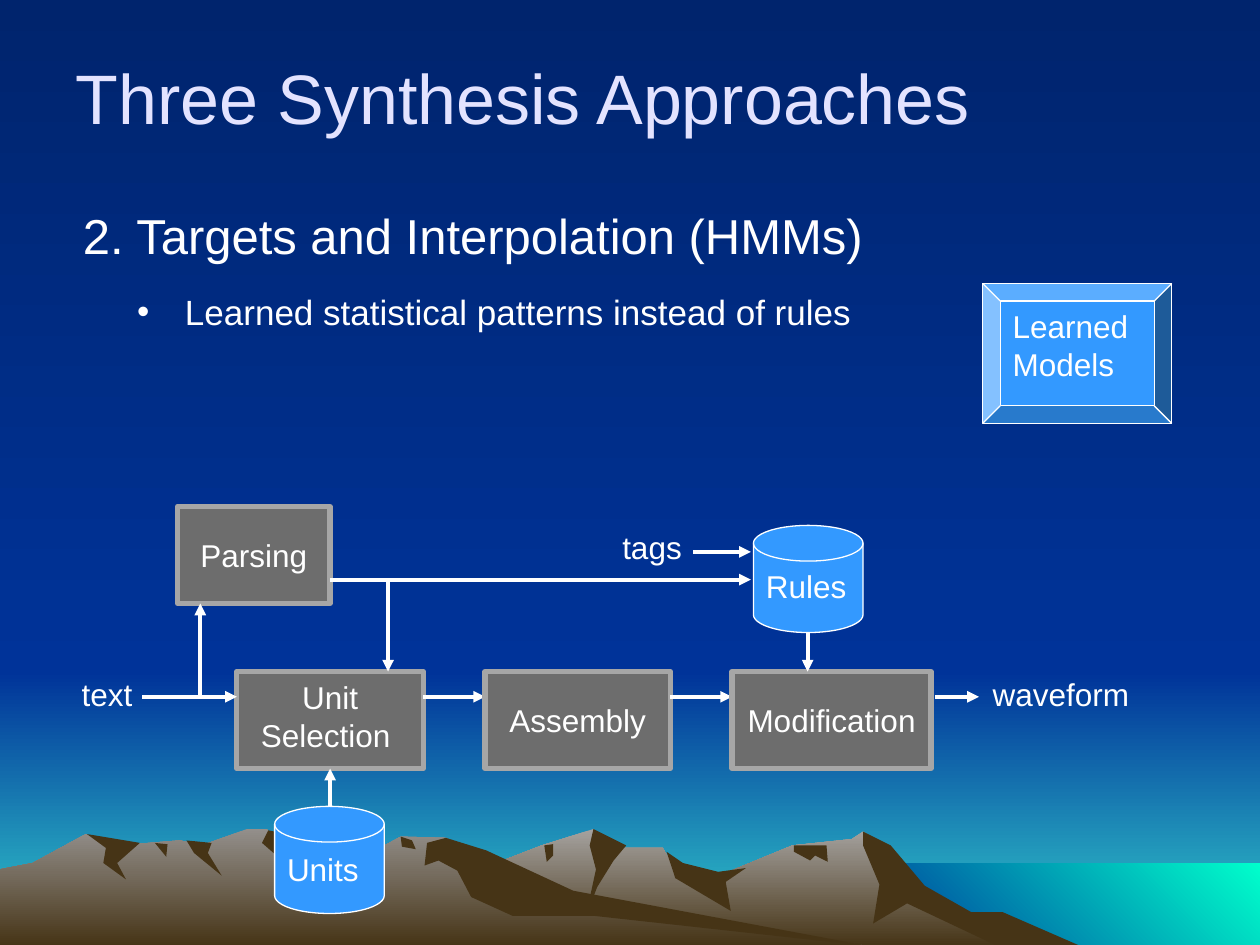
"""Build a slide on target-and-interpolation speech synthesis."""
from lxml import etree
from pptx import Presentation
from pptx.dml.color import RGBColor
from pptx.enum.shapes import MSO_CONNECTOR, MSO_SHAPE
from pptx.enum.text import MSO_ANCHOR, MSO_AUTO_SIZE, PP_ALIGN
from pptx.oxml.ns import qn
from pptx.util import Pt

PX = 9144
WIDTH, HEIGHT = 1000, 750
HORIZON, SEA_LEFT, SEA_TOP = 533, 683, 685
FOOT = 751
FONT = "Arial"
LEFT, CENTER = PP_ALIGN.LEFT, PP_ALIGN.CENTER
TOP, MIDDLE = MSO_ANCHOR.TOP, MSO_ANCHOR.MIDDLE
RECTANGLE, BEVEL = MSO_SHAPE.RECTANGLE, MSO_SHAPE.BEVEL
DISK = MSO_SHAPE.FLOWCHART_MAGNETIC_DISK
STRAIGHT = MSO_CONNECTOR.STRAIGHT
FIT_SHAPE = MSO_AUTO_SIZE.SHAPE_TO_FIT_TEXT
BOTTOM_SIDE = 2
DOWNWARD, UP_RIGHT = 270, 45

WHITE = RGBColor(0xFF, 0xFF, 0xFF)
LAVENDER = RGBColor(0xE3, 0xE3, 0xFF)
NAVY = RGBColor(0x00, 0x24, 0x6D)
ROYAL = RGBColor(0x00, 0x33, 0x99)
TEAL = RGBColor(0x33, 0xCC, 0xCC)
AQUA = RGBColor(0x00, 0xFF, 0xCC)
STONE = RGBColor(0xA5, 0xA2, 0x9F)
DARK_STONE = RGBColor(0x93, 0x8F, 0x8B)
EARTH = RGBColor(0x46, 0x34, 0x16)
GRAY = RGBColor(0x6D, 0x6D, 0x6D)
SILVER = RGBColor(0xA6, 0xA6, 0xA6)
BLUE = RGBColor(0x33, 0x99, 0xFF)

EAST_RIDGE = [(258, FOOT), (327, 709), (394, 685), (430, 671), (471, 658), (486, 673), (526, 673),
              (536, 690), (566, 697), (629, 671), (676, 666), (685, 660), (702, 671), (723, 698),
              (764, 723), (821, FOOT)]
EAST_SHADOWS = {
    "long slope": [(685, 660), (707, 671), (734, 703), (771, 724), (796, 724), (858, FOOT),
                   (792, FOOT), (720, 717), (693, 733), (698, 702), (685, 671)],
    "main peak": [(471, 658), (497, 671), (487, 683), (474, 704), (465, 727), (473, 690), (468, 671)],
    "saddle": [(529, 676), (542, 685), (570, 692), (592, 689), (576, 700), (580, 723), (536, 697)],
    "shoulder": [(630, 671), (656, 671), (657, 684), (647, 679), (643, 683), (630, 676)],
    "notch": [(432, 671), (439, 670), (439, 679), (434, 684)]}
WEST_RIDGE = [(0, FOOT), (0, 690), (26, 685), (68, 662), (94, 671), (143, 667), (160, 671),
              (196, 658), (212, 658), (236, 681), (260, 676), (271, 682), (296, 676), (318, 664),
              (354, 665), (432, 712), (690, FOOT)]
WEST_SHADOWS = {
    "main peak": [(213, 659), (232, 663), (271, 682), (261, 689), (267, 709), (241, 688), (232, 690),
                  (208, 669)],
    "long slope": [(339, 669), (354, 665), (386, 675), (455, 707), (690, FOOT), (472, 727),
                   (407, 727), (374, 712), (363, 691), (348, 683), (337, 687)],
    "saddle": [(318, 664), (327, 667), (330, 674), (319, 672)],
    "shoulder": [(148, 667), (168, 669), (165, 677), (176, 695), (154, 677)],
    "notch": [(123, 669), (133, 670), (132, 680)],
    "first peak": [(69, 662), (111, 669), (93, 685), (100, 698), (82, 685), (84, 673)]}

STEPS_TOP, STEP_HEIGHT, STEP_GAP = 533, 77, 49
FLOW_Y, PARSED_Y, TAGS_Y = 553, 460, 438
STORE_WIDTH, STORE_HEIGHT = 87, 85


def rectangle_points(left, top, right, bottom):
    """Return the corners of a rectangle."""
    return [(left, top), (right, top), (right, bottom), (left, bottom)]


def fill_solid(fill, color):
    """Fill with one colour."""
    fill.solid()
    fill.fore_color.rgb = color


def fill_gradient(fill, start, end, angle=DOWNWARD):
    """Fill with two colours along a counter-clockwise angle."""
    fill.gradient()
    fill.gradient_angle = angle
    for stop, color in zip(fill.gradient_stops, (start, end)):
        stop.color.rgb = color


def write_text(para, text, size=18, color=WHITE, align=LEFT):
    """Write one formatted span into a paragraph."""
    para.alignment = align
    span = para.add_run()
    span.text = text
    span.font.size, span.font.name = Pt(size), FONT
    span.font.color.rgb = color


def add_terrain(page, points):
    """Draw a borderless outline and return its fill."""
    builder = page.shapes.build_freeform(*points[0], scale=PX)
    builder.add_line_segments(points[1:], close=True)
    shape = builder.convert_to_shape()
    shape.shadow.inherit = False
    shape.line.fill.background()
    return shape.fill


def add_range(page, ridge, crest, shadows):
    """Draw a mountain range with its shadows."""
    fill_gradient(add_terrain(page, ridge), crest, EARTH)
    for points in shadows.values():
        fill_solid(add_terrain(page, points), EARTH)


def add_block(page, kind, bounds, lines, fill=BLUE, border=WHITE, weight=0.75, align=LEFT, anchor=TOP):
    """Add a labelled preset shape."""
    box = page.shapes.add_shape(kind, *(value * PX for value in bounds))
    box.shadow.inherit = False
    fill_solid(box.fill, fill)
    box.line.color.rgb = border
    box.line.width = Pt(weight)
    frame = box.text_frame
    frame.word_wrap = True
    frame.vertical_anchor = anchor
    for index, line in enumerate(lines):
        para = frame.add_paragraph() if index else frame.paragraphs[0]
        write_text(para, line, align=align)
    return box


def add_step(page, left, top, width, text, anchor=MIDDLE):
    """Add a gray processing step."""
    return add_block(page, RECTANGLE, (left, top, width, STEP_HEIGHT), [text], fill=GRAY,
                     border=SILVER, weight=3, align=CENTER, anchor=anchor)


def add_store(page, left, top, text, anchor=TOP):
    """Add a blue data store."""
    add_block(page, DISK, (left, top, STORE_WIDTH, STORE_HEIGHT), [text], anchor=anchor)


def add_label(page, left, top, width, text):
    """Add a one-line label."""
    box = page.shapes.add_textbox(left * PX, top * PX, width * PX, 40 * PX)
    box.text_frame.word_wrap = False
    box.text_frame.auto_size = FIT_SHAPE
    write_text(box.text_frame.paragraphs[0], text)


def add_arrow(page, start, end):
    """Add a white arrow between two points."""
    arrow = page.shapes.add_connector(STRAIGHT, *(value * PX for value in start + end))
    arrow.line.color.rgb = WHITE
    arrow.line.width = Pt(2.25)
    properties = arrow.element.spPr
    etree.SubElement(properties.find(qn("a:ln")), qn("a:tailEnd"), type="triangle")
    etree.SubElement(properties, qn("a:effectLst"))
    return arrow


def add_bullet(para, margin, indent):
    """Give a paragraph a hanging round bullet."""
    properties = para._p.get_or_add_pPr()
    properties.set("marL", str(margin * PX))
    properties.set("indent", str(indent * PX))
    etree.SubElement(properties, qn("a:buFont"), typeface=FONT)
    etree.SubElement(properties, qn("a:buChar"), char="•")


def add_scenery(page):
    """Draw the sky, the sea and the mountains."""
    fill_gradient(page.background.fill, NAVY, ROYAL)
    low_sky = rectangle_points(0, HORIZON, WIDTH, HEIGHT)
    high_sky = rectangle_points(0, 0, WIDTH, HORIZON)
    sea = rectangle_points(SEA_LEFT, SEA_TOP, WIDTH, HEIGHT)
    fill_gradient(add_terrain(page, low_sky), ROYAL, TEAL)
    fill_gradient(add_terrain(page, high_sky), NAVY, ROYAL)
    fill_gradient(add_terrain(page, sea), ROYAL, AQUA, angle=UP_RIGHT)
    add_range(page, EAST_RIDGE, STONE, EAST_SHADOWS)
    add_range(page, WEST_RIDGE, DARK_STONE, WEST_SHADOWS)


def add_heading(page):
    """Format the title and raise it above the scenery."""
    title = page.shapes.title
    title.element.getparent().append(title.element)
    title.left, title.top, title.width, title.height = 50 * PX, 14 * PX, 800 * PX, 125 * PX
    title.text_frame.vertical_anchor = MIDDLE
    write_text(title.text_frame.paragraphs[0], "Three Synthesis Approaches", size=40, color=LAVENDER)


def add_body(page):
    """Add the approach and its bullet."""
    frame = page.shapes.add_textbox(56 * PX, 149 * PX, 900 * PX, 237 * PX).text_frame
    frame.word_wrap = True
    approach, detail = frame.paragraphs[0], frame.add_paragraph()
    write_text(approach, "2. Targets and Interpolation (HMMs)", size=28)
    write_text(detail, "Learned statistical patterns instead of rules", size=20)
    approach.line_spacing = detail.line_spacing = 1.2
    approach.space_before, approach.space_after = Pt(5.6), Pt(6)
    detail.space_before, detail.level = Pt(4), 1
    add_bullet(detail, margin=81, indent=-38)


def add_pipeline(page):
    """Draw the steps from text to waveform, with the arrows that link them."""
    add_step(page, 141, 402, 121, "Parsing")
    left, steps = 188, []
    for text, width, anchor in (("Unit Selection ", 148, TOP), ("Assembly", 147, MIDDLE),
                                ("Modification", 158, MIDDLE)):
        steps.append(add_step(page, left, STEPS_TOP, width, text, anchor))
        right = left + width
        left = right + STEP_GAP
        if len(steps) < 3:
            add_arrow(page, (right, FLOW_Y), (left, FLOW_Y))
    add_arrow(page, (113, FLOW_Y), (188, FLOW_Y))
    add_arrow(page, (742, FLOW_Y), (777, FLOW_Y))
    add_arrow(page, (159, FLOW_Y), (159, 479))
    add_arrow(page, (262, PARSED_Y), (596, PARSED_Y))
    add_arrow(page, (308, PARSED_Y), (308, STEPS_TOP))
    add_arrow(page, (550, TAGS_Y), (596, TAGS_Y))
    add_arrow(page, (641, 501), (641, STEPS_TOP))
    add_arrow(page, (262, 641), (262, 610)).end_connect(steps[0], BOTTOM_SIDE)
    add_store(page, 598, 417, "Rules")
    add_store(page, 218, 640, "Units", anchor=MIDDLE)
    add_block(page, BEVEL, (780, 225, 150, 111), ["Learned", "Models"])
    for label in ((55, 531, 61, "text"), (484, 414, 68, "tags"), (778, 531, 130, "waveform")):
        add_label(page, *label)


def main():
    """Build and save the deck."""
    deck = Presentation()
    deck.slide_width, deck.slide_height = WIDTH * PX, HEIGHT * PX
    page = deck.slides.add_slide(deck.slide_layouts[5])
    for add_part in (add_scenery, add_heading, add_body, add_pipeline):
        add_part(page)
    deck.save("out.pptx")


if __name__ == "__main__":
    main()
